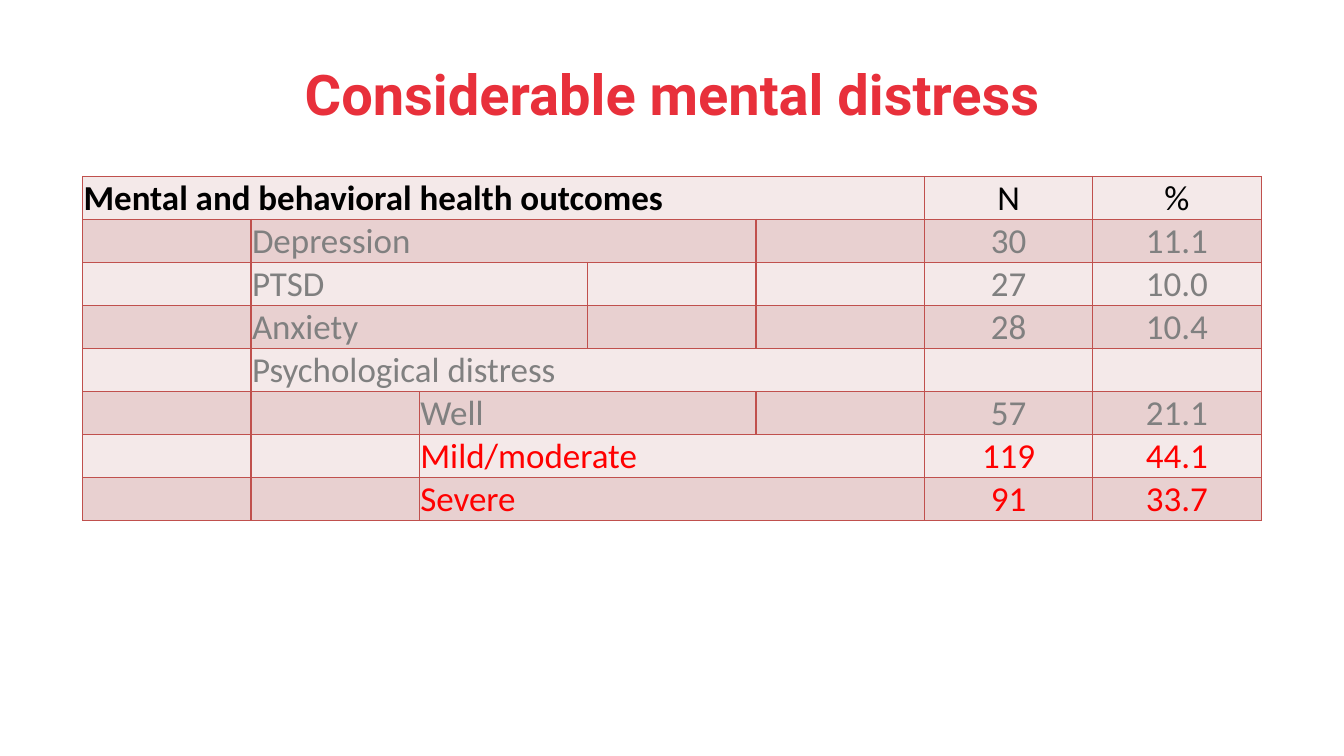
from dataclasses import dataclass

from lxml import etree
from pptx import Presentation
from pptx.dml.color import RGBColor
from pptx.enum.text import MSO_ANCHOR, PP_ALIGN
from pptx.oxml.ns import qn
from pptx.util import Inches, Pt

LEFT, CENTER = PP_ALIGN.LEFT, PP_ALIGN.CENTER
MIDDLE, BOTTOM = MSO_ANCHOR.MIDDLE, MSO_ANCHOR.BOTTOM


@dataclass(frozen=True)
class Theme:
    title_font: str = "Roboto"
    body_font: str = "Calibri"
    title_size: int = 40
    body_size: int = 25
    title: str = "E8303B"
    heading: str = "000000"
    muted: str = "808080"
    alert: str = "FF0000"
    bands: tuple = ("F4E9E9", "E8D0D0")
    border: str = "C0504D"
    border_width: int = 1


@dataclass(frozen=True)
class Outcome:
    label: str
    indent: int  # empty columns before the label
    span: int    # columns the label covers
    count: str
    percent: str
    color: str
    bold: bool = False


class SlideBuilder:
    """Places elements on a grid of seven columns between the side margins."""
    COLUMNS = 7
    MARGIN, COLUMN, ROW = 0.82, 1.67, 0.41

    def __init__(self, slide, theme):
        self.slide, self.theme = slide, theme
        self.left = Inches(self.MARGIN)
        self.width = Inches(self.COLUMN * self.COLUMNS)

    def set_text(self, paragraph, text, font, size, color, bold, align):
        paragraph.text = text
        paragraph.alignment = align
        paragraph.font.name = font
        paragraph.font.size = Pt(size)
        paragraph.font.bold = bold
        paragraph.font.color.rgb = RGBColor.from_string(color)

    def title(self, text, top, height):
        theme = self.theme
        frame = self.slide.shapes.add_textbox(
            self.left, Inches(top), self.width, Inches(height)).text_frame
        frame.word_wrap = True
        frame.vertical_anchor = MIDDLE
        self.set_text(frame.paragraphs[0], text, theme.title_font,
                      theme.title_size, theme.title, True, CENTER)

    def borders(self, cell):
        properties = cell._tc.get_or_add_tcPr()
        for position, side in enumerate(("a:lnL", "a:lnR", "a:lnT", "a:lnB")):
            line = etree.Element(qn(side), w=str(Pt(self.theme.border_width)))
            fill = etree.SubElement(line, qn("a:solidFill"))
            etree.SubElement(fill, qn("a:srgbClr"), val=self.theme.border)
            properties.insert(position, line)

    def style_cell(self, cell, band):
        cell.fill.solid()
        cell.fill.fore_color.rgb = RGBColor.from_string(band)
        cell.margin_left = cell.margin_right = cell.margin_top = Inches(0.01)
        cell.margin_bottom = 0
        cell.vertical_anchor = BOTTOM
        self.borders(cell)

    def outcome_table(self, outcomes, top):
        theme = self.theme
        table = self.slide.shapes.add_table(
            len(outcomes), self.COLUMNS, self.left, Inches(top),
            self.width, Inches(self.ROW * len(outcomes))).table
        table.first_row = table.horz_banding = False
        for column in table.columns:
            column.width = Inches(self.COLUMN)

        for row, outcome in enumerate(outcomes):
            band = theme.bands[row % len(theme.bands)]
            texts = {outcome.indent: outcome.label,
                     self.COLUMNS - 2: outcome.count,
                     self.COLUMNS - 1: outcome.percent}
            for column in range(self.COLUMNS):
                cell = table.cell(row, column)
                self.style_cell(cell, band)
                align = LEFT if column < self.COLUMNS - 2 else CENTER
                self.set_text(cell.text_frame.paragraphs[0],
                              texts.get(column, ""), theme.body_font,
                              theme.body_size, outcome.color,
                              outcome.bold and column == outcome.indent, align)
            table.cell(row, outcome.indent).merge(
                table.cell(row, outcome.indent + outcome.span - 1))


def main():
    theme = Theme()
    presentation = Presentation()
    presentation.slide_width = Inches(13.33)
    presentation.slide_height = Inches(7.5)
    slide = presentation.slides.add_slide(presentation.slide_layouts[6])
    builder = SlideBuilder(slide, theme)

    # Title
    builder.title("Considerable mental distress", top=0.3, height=1.25)

    # Outcomes, with the two distress levels of concern highlighted
    builder.outcome_table([
        Outcome("Mental and behavioral health outcomes", 0, 5, "N", "%",
                theme.heading, bold=True),
        Outcome("Depression", 1, 3, "30", "11.1", theme.muted),
        Outcome("PTSD", 1, 2, "27", "10.0", theme.muted),
        Outcome("Anxiety", 1, 2, "28", "10.4", theme.muted),
        Outcome("Psychological distress", 1, 4, "", "", theme.muted),
        Outcome("Well", 2, 2, "57", "21.1", theme.muted),
        Outcome("Mild/moderate", 2, 3, "119", "44.1", theme.alert),
        Outcome("Severe", 2, 3, "91", "33.7", theme.alert),
    ], top=1.75)

    presentation.save("out.pptx")


if __name__ == "__main__":
    main()
